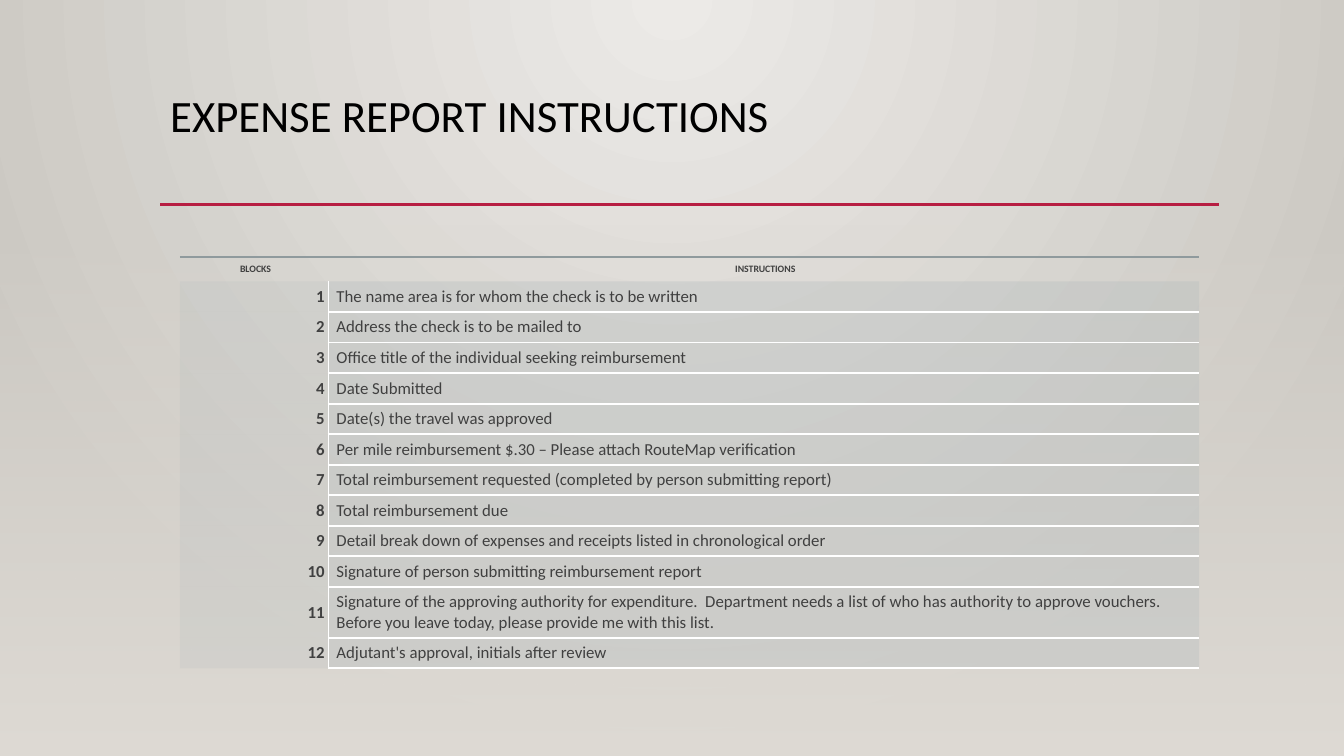
from lxml import etree
from pptx import Presentation
from pptx.dml.color import RGBColor
from pptx.enum.shapes import MSO_CONNECTOR, MSO_SHAPE
from pptx.enum.text import MSO_ANCHOR, PP_ALIGN
from pptx.oxml import parse_xml
from pptx.oxml.ns import nsdecls, qn
from pptx.util import Cm, Pt

TITLE = "EXPENSE REPORT INSTRUCTIONS"
HEADINGS = ("BLOCKS", "INSTRUCTIONS")
INSTRUCTIONS = [
    "The name area is for whom the check is to be written",
    "Address the check is to be mailed to",
    "Office title of the individual seeking reimbursement",
    "Date Submitted",
    "Date(s) the travel was approved",
    "Per mile reimbursement $.30 – Please attach RouteMap verification",
    "Total reimbursement requested (completed by person submitting report)",
    "Total reimbursement due",
    "Detail break down of expenses and receipts listed in chronological order",
    "Signature of person submitting reimbursement report",
    "Signature of the approving authority for expenditure.  Department needs a list of who "
    "has authority to approve vouchers.  Before you leave today, please provide me with this list.",
    "Adjutant's approval, initials after review",
]
FONT = "Calibri"
BLACK, TEXT, WHITE = "000000", "404040", "FFFFFF"
ACCENT, HEADER_LINE, CELL_FILL = "B71E42", "8F9A9D", "B4BCBE"
COLUMN_WIDTHS = (3.75, 21.94)
HEADER_HEIGHT, ROW_HEIGHT, TWO_LINE_HEIGHT = 0.61, 0.77, 1.28
TWO_LINE_ROW = 11
NO_STYLE_TABLE = "{2D5ABB26-0587-4C30-8999-92F81FD0307C}"
RADIAL = '<a:path path="circle"><a:fillToRect l="43000" t="0" r="43000" b="100000"/></a:path>'
DOWNWARD = '<a:lin ang="5400000" scaled="0"/>'


def color(value):
    return RGBColor.from_string(value)


def color_xml(value, opacity=100):
    return f'<a:srgbClr val="{value}"><a:alpha val="{opacity * 1000}"/></a:srgbClr>'


def set_gradient(fill, owner, start, end, direction):
    """Give the fill inside the owner element a two-stop gradient."""
    fill.gradient()
    gradient = next(owner.iter(qn("a:gradFill")))
    gradient.getparent().replace(gradient, parse_xml(
        f'<a:gradFill {nsdecls("a")} rotWithShape="1"><a:gsLst>'
        f'<a:gs pos="0">{start}</a:gs><a:gs pos="100000">{end}</a:gs>'
        f'</a:gsLst>{direction}</a:gradFill>'))


def write(frame, text, size=12, text_color=TEXT, bold=False, align=PP_ALIGN.LEFT, spacing=1.0):
    paragraph = frame.paragraphs[0]
    paragraph.alignment = align
    paragraph.line_spacing = spacing
    run = paragraph.add_run()
    run.text = text
    run.font.name = FONT
    run.font.size = Pt(size)
    run.font.bold = bold
    run.font.color.rgb = color(text_color)


def format_cell(cell, inset, opacity=None, **borders):
    """Set margins, fill and borders; borders map L, T, B to color XML."""
    cell.vertical_anchor = MSO_ANCHOR.MIDDLE
    cell.margin_left = Cm(0.2)
    cell.margin_right = cell.margin_top = cell.margin_bottom = Cm(inset)
    properties = cell._tc.get_or_add_tcPr()
    if opacity is None:
        cell.fill.background()
    else:
        cell.fill.solid()
        cell.fill.fore_color.rgb = color(CELL_FILL)
        alpha = etree.SubElement(next(properties.iter(qn("a:srgbClr"))), qn("a:alpha"))
        alpha.set("val", str(opacity * 1000))
    sides = [side for side in "LTB" if side in borders]
    for index, side in enumerate(sides):
        properties.insert(index, parse_xml(
            f'<a:ln{side} {nsdecls("a")} w="{Pt(1.5)}"><a:solidFill>{borders[side]}'
            f'</a:solidFill></a:ln{side}>'))


def add_title(slide):
    box = slide.shapes.add_textbox(Cm(4.04), Cm(2.24), Cm(26.67), Cm(2.92))
    box.text_frame.word_wrap = True
    write(box.text_frame, TITLE, size=32, text_color=BLACK, spacing=0.9)
    line = slide.shapes.add_connector(
        MSO_CONNECTOR.STRAIGHT, Cm(4.04), Cm(5.15), Cm(30.71), Cm(5.15))
    line.line.color.rgb = color(ACCENT)
    line.line.width = Pt(2.5)
    etree.SubElement(line._element.spPr, qn("a:effectLst"))


def add_fade(slide):
    fade = slide.shapes.add_shape(MSO_SHAPE.RECTANGLE, 0, Cm(5.61), Cm(33.87), Cm(13.44))
    fade.shadow.inherit = False
    fade.line.fill.background()
    set_gradient(fade.fill, fade._element, color_xml("DFDBD5", 0), color_xml("DFDBD5"), DOWNWARD)


def add_instructions(slide):
    heights = [HEADER_HEIGHT] + [ROW_HEIGHT] * len(INSTRUCTIONS)
    heights[TWO_LINE_ROW] = TWO_LINE_HEIGHT
    frame = slide.shapes.add_table(
        len(heights), len(COLUMN_WIDTHS), Cm(4.53), Cm(6.48),
        Cm(sum(COLUMN_WIDTHS)), Cm(sum(heights)))
    table = frame.table
    table.first_row = table.horz_banding = False
    next(frame._element.iter(qn("a:tableStyleId"))).text = NO_STYLE_TABLE
    for column, width in zip(table.columns, COLUMN_WIDTHS):
        column.width = Cm(width)
    for row, height in zip(table.rows, heights):
        row.height = Cm(height)

    for column, heading in enumerate(HEADINGS):
        cell = table.cell(0, column)
        write(cell.text_frame, heading, size=7, bold=True, align=PP_ALIGN.CENTER)
        format_cell(cell, 0.13, T=color_xml(HEADER_LINE))
    white = color_xml(WHITE)
    for number, instruction in enumerate(INSTRUCTIONS, start=1):
        block, detail = table.cell(number, 0), table.cell(number, 1)
        write(block.text_frame, str(number), bold=True, align=PP_ALIGN.RIGHT)
        format_cell(block, 0.1, opacity=20)
        write(detail.text_frame, instruction)
        top = {"T": white} if number > 1 else {}
        format_cell(detail, 0.1, opacity=35, L=white, B=white, **top)


def main():
    presentation = Presentation()
    presentation.slide_width, presentation.slide_height = Cm(33.87), Cm(19.05)
    slide = presentation.slides.add_slide(presentation.slide_layouts[6])
    set_gradient(slide.background.fill, slide.element,
                 color_xml("ECEAE7"), color_xml("CAC7C1"), RADIAL)
    add_title(slide)
    add_fade(slide)
    add_instructions(slide)
    presentation.save("out.pptx")


if __name__ == "__main__":
    main()
